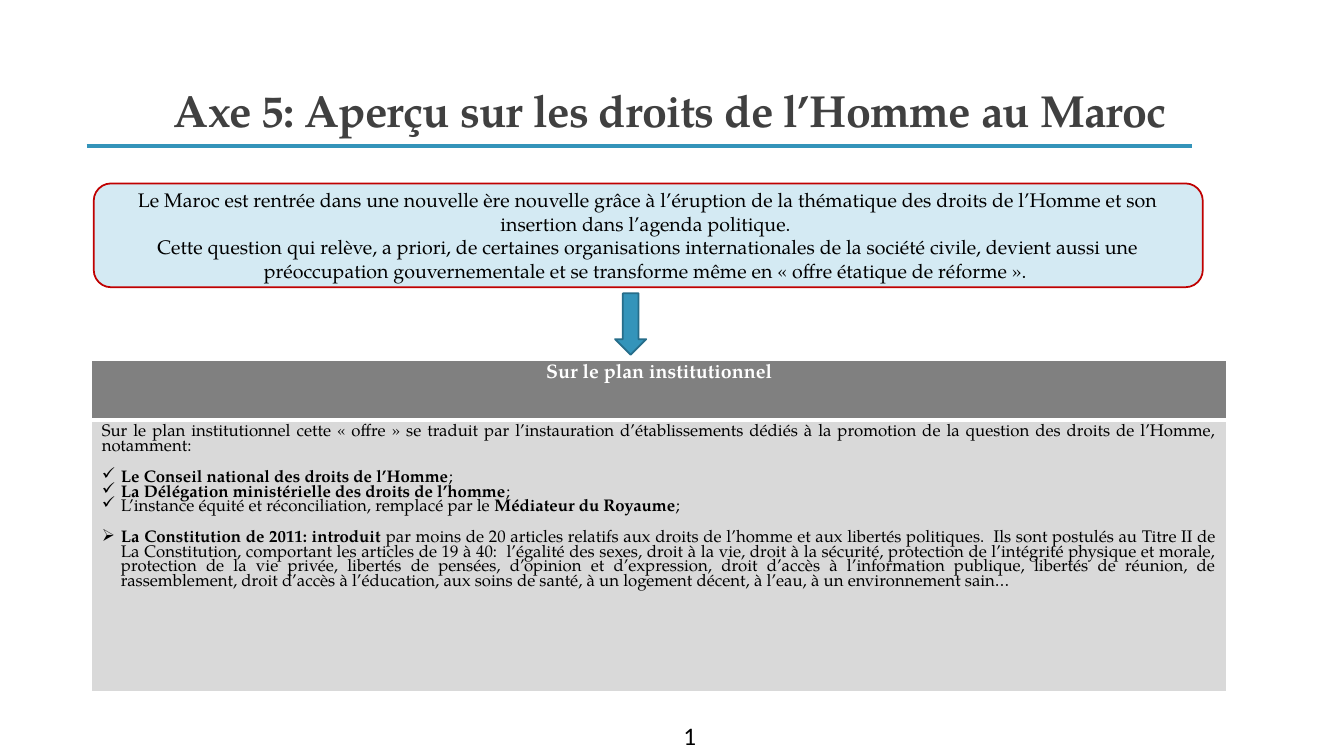
from lxml import etree
from pptx import Presentation, util as u
from pptx.dml.color import RGBColor
from pptx.enum import shapes, text
from pptx.oxml import ns

Inches = u.Inches
FONT = "TeX Gyre Pagella"
COLORS = {
    "title": "404040", "accent": "3494BA", "accent_dark": "266D8A",
    "intro": "D4EAF3", "red": "C00000", "header": "808080",
    "body": "D9D9D9", "white": "FFFFFF", "black": "000000",
}

TITLE = "Axe 5: Aperçu sur les droits de l’Homme au Maroc "
INTRO = [
    "Le Maroc est rentrée dans une nouvelle ère nouvelle grâce à l’éruption de la thématique "
    "des droits de l’Homme et son insertion dans l’agenda politique. ",
    "Cette question qui relève, a priori, de certaines organisations internationales de la "
    "société civile, devient aussi une préoccupation gouvernementale et se transforme même en "
    "« offre étatique de réforme ». ",
]
HEADER = "Sur le plan institutionnel"
# Each entry: bullet, starts a new group, runs as (text, bold)
BODY = [
    (None, False, [(
        "Sur le plan institutionnel cette « offre » se traduit par l’instauration "
        "d’établissements dédiés à la promotion de la question des droits de l’Homme, "
        "notamment: ", False)]),
    ("✓", True, [("Le Conseil national des droits de l’Homme", True), (";", False)]),
    ("✓", False, [("La Délégation ministérielle des droits de l’homme", True), (";", False)]),
    ("✓", False, [("L’instance équité et réconciliation, remplacé par le ", False),
                  ("Médiateur du Royaume", True), ("; ", False)]),
    ("➢", True, [("La Constitution de 2011: introduit", True), (
        " par moins de 20 articles relatifs aux droits de l’homme et aux libertés politiques.  "
        "Ils sont postulés au Titre II de La Constitution, comportant les articles de 19 à 40:  "
        "l’égalité des sexes, droit à la vie, droit à la sécurité, protection de l’intégrité "
        "physique et morale, protection de la vie privée, libertés de pensées, d’opinion et "
        "d’expression, droit d’accès à l’information publique, libertés de réunion, de "
        "rassemblement, droit d’accès à l’éducation, aux soins de santé, à un logement décent, "
        "à l’eau, à un environnement sain…", False)]),
]


def color(name):
    return RGBColor.from_string(COLORS[name])


def add_run(paragraph, words, size, tint="black", bold=False, font=FONT):
    run = paragraph.add_run()
    run.text = words
    run.font.name, run.font.size, run.font.bold = font, u.Pt(size), bold
    run.font.color.rgb = color(tint)
    return run


def next_paragraph(frame, index):
    return frame.paragraphs[0] if index == 0 else frame.add_paragraph()


def add_bullet(paragraph, symbol):
    properties = paragraph._p.get_or_add_pPr()
    properties.set("marL", str(Inches(0.19)))
    properties.set("indent", str(-Inches(0.19)))
    etree.SubElement(properties, ns.qn("a:buChar")).set("char", symbol)


def add_cell_borders(cell, widths):
    properties = cell._tc.get_or_add_tcPr()
    for side, width in zip("LRTB", widths):
        line = etree.SubElement(properties, ns.qn(f"a:ln{side}"), w=str(u.Pt(width)))
        fill = etree.SubElement(line, ns.qn("a:solidFill"))
        etree.SubElement(fill, ns.qn("a:srgbClr"), val=COLORS["white"])


def add_box(slide, kind, box, fill, line):
    shape = slide.shapes.add_shape(kind, *map(Inches, box))
    shape.shadow.inherit = False
    shape.fill.solid()
    shape.fill.fore_color.rgb = color(fill)
    shape.line.color.rgb = color(line)
    shape.line.width = u.Pt(1.25)
    return shape


def add_title(slide, box):
    left, top, width, height = box
    frame = slide.shapes.add_textbox(*map(Inches, box)).text_frame
    frame.word_wrap = True
    frame.vertical_anchor = text.MSO_ANCHOR.BOTTOM
    paragraph = frame.paragraphs[0]
    paragraph.alignment = text.PP_ALIGN.CENTER
    paragraph.line_spacing = 0.85
    run = add_run(paragraph, TITLE, 32, "title", bold=True)
    run._r.get_or_add_rPr().set("spc", "-50")

    # Rule under the title
    rule_left, rule_top = left - 0.34, top + height + 0.04
    rule = slide.shapes.add_connector(
        shapes.MSO_CONNECTOR.STRAIGHT, Inches(rule_left), Inches(rule_top),
        Inches(rule_left + 10.96), Inches(rule_top))
    rule.line.color.rgb = color("accent")
    rule.line.width = u.Pt(3)
    etree.SubElement(rule._element.spPr, ns.qn("a:effectLst"))


def add_intro(slide, box):
    left, top, width, height = box
    shape = add_box(slide, shapes.MSO_SHAPE.ROUNDED_RECTANGLE, box, "intro", "red")
    frame = shape.text_frame
    frame.word_wrap = True
    frame.vertical_anchor = text.MSO_ANCHOR.MIDDLE
    for index, words in enumerate(INTRO):
        paragraph = next_paragraph(frame, index)
        paragraph.alignment = text.PP_ALIGN.CENTER
        add_run(paragraph, words, 14)

    # Arrow down to the table
    arrow_box = (left + 5.17, top + height + 0.06, 0.31, 0.61)
    add_box(slide, shapes.MSO_SHAPE.DOWN_ARROW, arrow_box, "accent", "accent_dark")


def add_institutions(slide, box):
    table = slide.shapes.add_table(2, 1, *map(Inches, box)).table
    header, body = table.cell(0, 0), table.cell(1, 0)
    table.rows[0].height = Inches(0.59)
    table.rows[1].height = Inches(box[3] - 0.59)
    for cell, fill, widths in ((header, "header", (1, 1, 1, 3)), (body, "body", (1, 1, 3, 1))):
        add_cell_borders(cell, widths)
        cell.fill.solid()
        cell.fill.fore_color.rgb = color(fill)

    # Header row
    paragraph = header.text_frame.paragraphs[0]
    paragraph.alignment = text.PP_ALIGN.CENTER
    paragraph.line_spacing = 0.85
    add_run(paragraph, HEADER, 14, "white", bold=True)

    # Body row
    for index, (symbol, new_group, runs) in enumerate(BODY):
        paragraph = next_paragraph(body.text_frame, index)
        paragraph.alignment = text.PP_ALIGN.JUSTIFY
        paragraph.line_spacing = 0.85
        if new_group:
            paragraph.space_before = u.Pt(12)
        if symbol:
            add_bullet(paragraph, symbol)
        for words, bold in runs:
            add_run(paragraph, words, 12, bold=bold)


def add_page_number(slide, box):
    frame = slide.shapes.add_textbox(*map(Inches, box)).text_frame
    frame.word_wrap = True
    add_run(frame.paragraphs[0], "1", 18, font="Calibri")


def main():
    presentation = Presentation()
    presentation.slide_width, presentation.slide_height = Inches(13.33), Inches(7.5)
    slide = presentation.slides.add_slide(presentation.slide_layouts[6])
    add_title(slide, (1.2, 0.31, 11, 1.1))
    add_page_number(slide, (6.68, 7.1, 1.25, 0.4))
    add_institutions(slide, (0.91, 3.58, 11.26, 3.28))
    add_intro(slide, (0.93, 1.82, 11, 1.03))
    presentation.save("out.pptx")


if __name__ == "__main__":
    main()
